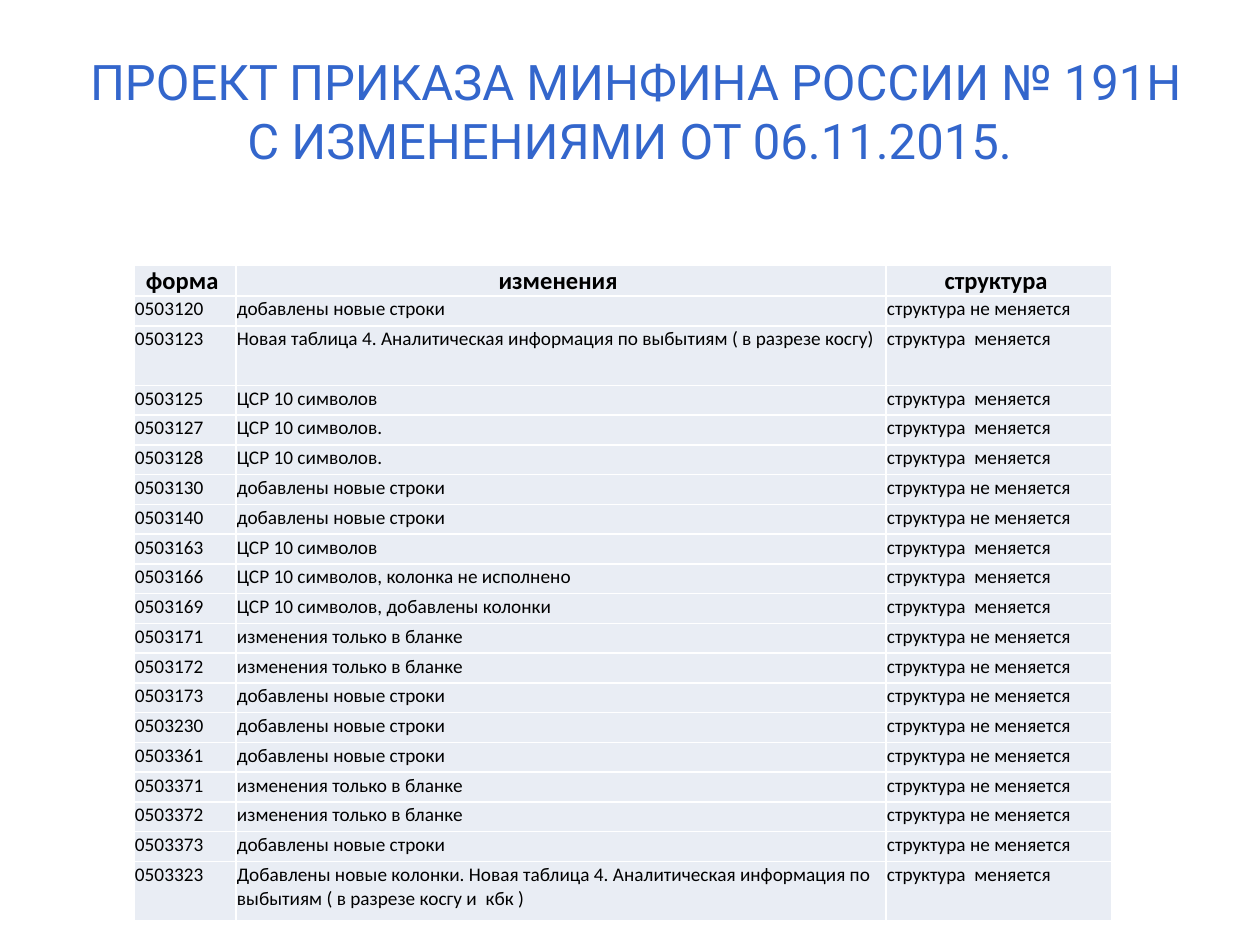
from typing import NamedTuple

from lxml import etree
from pptx import Presentation
from pptx.dml.color import RGBColor
from pptx.enum import text
from pptx.oxml import ns
from pptx.util import Pt

PX = 914400 // 126  # EMU per px
BLUE = RGBColor(0x33, 0x66, 0xCC)
BLACK = RGBColor(0x00, 0x00, 0x00)
WHITE = RGBColor(0xFF, 0xFF, 0xFF)
PALE = RGBColor(0xE9, 0xED, 0xF4)

TITLE_LINES = ("ПРОЕКТ ПРИКАЗА МИНФИНА РОССИИ № 191Н",
               "С ИЗМЕНЕНИЯМИ ОТ 06.11.2015. ")
HEADERS = ("форма ", "изменения ", "структура ")
COLUMN_WIDTHS = (102, 650, 226)
TABLE_HEIGHT = 655

NEW_LINES = "добавлены новые строки"
BLANK_ONLY = "изменения только в бланке"
CSR = "ЦСР 10 символов"
SAME = "структура не меняется"
CHANGED = "структура  меняется"


class FormChange(NamedTuple):
    form: str
    change: str
    structure: str = SAME
    lines: int = 1


CHANGES = (
    FormChange("0503120", NEW_LINES),
    FormChange("0503123", "Новая таблица 4. Аналитическая информация по выбытиям "
               "( в разрезе косгу)", CHANGED, 2),
    FormChange("0503125", CSR, CHANGED),
    FormChange("0503127", CSR + ".", CHANGED),
    FormChange("0503128", CSR + ".", CHANGED),
    FormChange("0503130", NEW_LINES),
    FormChange("0503140", NEW_LINES),
    FormChange("0503163", CSR, CHANGED),
    FormChange("0503166", CSR + ", колонка не исполнено", CHANGED),
    FormChange("0503169", CSR + ", добавлены колонки", CHANGED),
    FormChange("0503171", BLANK_ONLY),
    FormChange("0503172", BLANK_ONLY),
    FormChange("0503173", NEW_LINES),
    FormChange("0503230", NEW_LINES),
    FormChange("0503361", NEW_LINES),
    FormChange("0503371", BLANK_ONLY),
    FormChange("0503372", BLANK_ONLY),
    FormChange("0503373", NEW_LINES),
    FormChange("0503323", "Добавлены новые колонки. Новая таблица 4. Аналитическая "
               "информация по выбытиям ( в разрезе косгу и  кбк )", CHANGED, 2),
)


def px(n: int) -> int:
    return n * PX


def add_run(p, words: str, font: str, size: int, color: RGBColor,
            bold: bool = False) -> None:
    r = p.add_run()
    r.text = words
    r.font.name, r.font.size, r.font.bold = font, Pt(size), bold
    r.font.color.rgb = color


def add_borders(cell) -> None:
    """Draw a white 1 pt line on each side; lines go before the fill."""
    tc_pr = cell._tc.get_or_add_tcPr()
    for i, side in enumerate(("lnL", "lnR", "lnT", "lnB")):
        ln = etree.Element(ns.qn(f"a:{side}"), w=str(Pt(1)))
        fill = etree.SubElement(ln, ns.qn("a:solidFill"))
        etree.SubElement(fill, ns.qn("a:srgbClr"), val=str(WHITE))
        tc_pr.insert(i, ln)


def fill_cell(cell, words: str, header: bool) -> None:
    cell.margin_left = cell.margin_right = cell.margin_top = px(1)
    cell.margin_bottom = 0
    cell.fill.solid()
    cell.fill.fore_color.rgb = PALE
    add_borders(cell)
    p = cell.text_frame.paragraphs[0]
    p.alignment = text.PP_ALIGN.CENTER if header else text.PP_ALIGN.LEFT
    p.line_spacing = 1.02
    add_run(p, words, "Calibri", 14 if header else 11, BLACK, header)


def add_title(s) -> None:
    tf = s.shapes.add_textbox(px(25), px(45), px(1221), px(131)).text_frame
    tf.word_wrap = True
    p = tf.paragraphs[0]
    p.alignment = text.PP_ALIGN.CENTER
    for i, line in enumerate(TITLE_LINES):
        if i:
            p.add_line_break()
        add_run(p, line, "Roboto", 28, BLUE)


def add_changes_table(s) -> None:
    table = s.shapes.add_table(len(CHANGES) + 1, len(HEADERS), px(134), px(265),
                               px(sum(COLUMN_WIDTHS)), px(TABLE_HEIGHT)).table
    for column, width in zip(table.columns, COLUMN_WIDTHS):
        column.width = px(width)

    # Row heights follow the number of text lines
    row_lines = [1] + [change.lines for change in CHANGES]
    line_height = px(TABLE_HEIGHT) // sum(row_lines)
    contents = [HEADERS] + [change[:3] for change in CHANGES]
    for i, (row, lines, words) in enumerate(zip(table.rows, row_lines, contents)):
        row.height = lines * line_height
        for cell, entry in zip(row.cells, words):
            fill_cell(cell, entry, header=i == 0)


def main() -> None:
    prs = Presentation()
    prs.slide_width, prs.slide_height = px(1260), px(945)
    s = prs.slides.add_slide(prs.slide_layouts[6])
    s.background.fill.solid()
    s.background.fill.fore_color.rgb = WHITE
    add_title(s)
    add_changes_table(s)
    prs.save("out.pptx")


if __name__ == "__main__":
    main()
